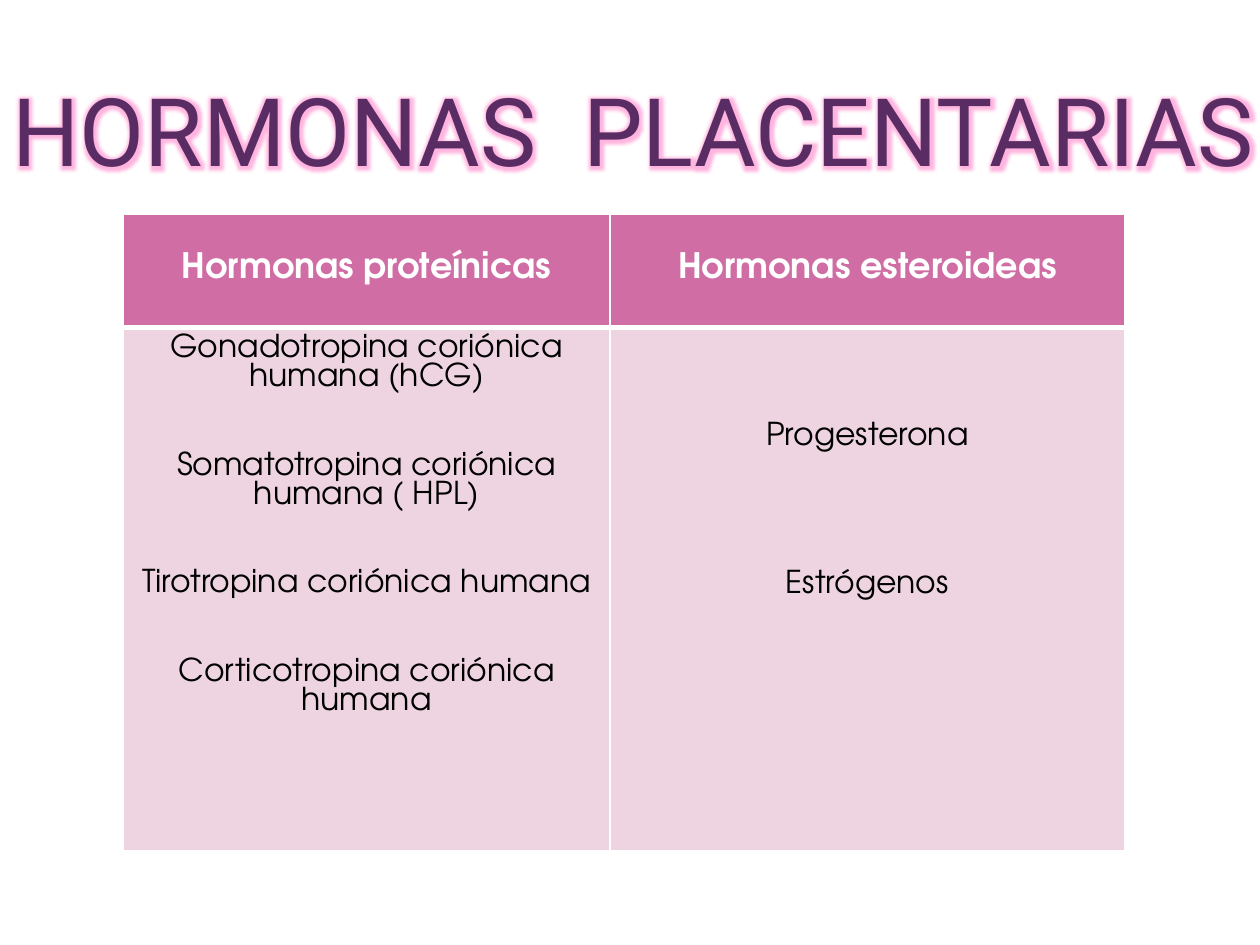
from dataclasses import dataclass

from lxml import etree
from pptx import Presentation
from pptx.dml.color import RGBColor
from pptx.enum.text import MSO_ANCHOR, MSO_AUTO_SIZE, PP_ALIGN
from pptx.oxml.ns import qn
from pptx.util import Inches, Pt

CENTER, LEFT = PP_ALIGN.CENTER, PP_ALIGN.LEFT
TOP = MSO_ANCHOR.TOP
FIT_SHAPE = MSO_AUTO_SIZE.SHAPE_TO_FIT_TEXT
TITLE_ONLY = 5


@dataclass(frozen=True)
class Theme:
    title_font: str = "Roboto"
    table_font: str = "TeX Gyre Adventor"
    title_size: float = 54
    head_size: float = 20
    body_size: float = 18
    body_line: float = 16.85  # height of one body line, points
    purple: str = "5A2C64"
    glow: str = "FFB4DF"
    head_fill: str = "CF6DA4"
    body_fill: str = "EDD4E0"
    white: str = "FFFFFF"
    black: str = "000000"


THEME = Theme()
COLUMNS = (3.86, 4.09)
ROWS = (0.9, 4.15)

# Per column: heading, blank lines above the list, blank lines between items, items
HORMONES = (
    ("Hormonas proteínicas", 0, 2, (
        "Gonadotropina coriónica humana (hCG)",
        "Somatotropina coriónica humana ( HPL)",
        "Tirotropina coriónica humana",
        "Corticotropina coriónica humana")),
    ("Hormonas esteroideas", 3, 4, ("Progesterona", "Estrógenos")),
)


def add_text(p, text, color, **formats):
    r = p.add_run()
    r.text = text
    for name, value in formats.items():
        setattr(r.font, name, value)
    r.font.color.rgb = RGBColor.from_string(color)
    return r


def add_glow(r, color, radius):
    """Put a soft glow behind a run, right after its fill."""
    effects = etree.Element(qn("a:effectLst"))
    glow = etree.SubElement(effects, qn("a:glow"), rad=str(Pt(radius)))
    etree.SubElement(glow, qn("a:srgbClr"), val=color)
    r.font._element.find(qn("a:solidFill")).addnext(effects)


def add_title(s, text):
    sp = s.shapes.title
    sp.left, sp.top, sp.width, sp.height = map(Inches, (0, 0.52, 12.05, 1.01))
    tf = sp.text_frame
    tf.word_wrap, tf.auto_size, tf.vertical_anchor = True, FIT_SHAPE, TOP
    p = tf.paragraphs[0]
    p.alignment = LEFT
    r = add_text(p, text, THEME.purple, name=THEME.title_font,
                 size=Pt(THEME.title_size))
    add_glow(r, THEME.glow, 8)


def style_cell(cell, fill, bottom=1):
    """Draw white borders, then fill the cell."""
    props = cell._tc.get_or_add_tcPr()
    for side, width in (("L", 1), ("R", 1), ("T", 1), ("B", bottom)):
        line = etree.SubElement(props, qn(f"a:ln{side}"), w=str(Pt(width)))
        paint = etree.SubElement(line, qn("a:solidFill"))
        etree.SubElement(paint, qn("a:srgbClr"), val=THEME.white)
    cell.fill.solid()
    cell.fill.fore_color.rgb = RGBColor.from_string(fill)


def fill_heading(cell, text):
    style_cell(cell, THEME.head_fill, bottom=3)
    p = cell.text_frame.paragraphs[0]
    p.alignment, p.line_spacing = CENTER, 2.0
    add_text(p, text, THEME.white, name=THEME.table_font,
             size=Pt(THEME.head_size), bold=True)


def fill_list(cell, lead, gap, items):
    style_cell(cell, THEME.body_fill)
    cell.margin_top = Inches(0.05) + Pt(lead * THEME.body_line)
    tf = cell.text_frame
    for i, item in enumerate(items):
        p = tf.add_paragraph() if i else tf.paragraphs[0]
        p.alignment = CENTER
        if i:
            p.space_before = Pt(gap * THEME.body_line)
        add_text(p, item, THEME.black, name=THEME.table_font,
                 size=Pt(THEME.body_size), bold=False)


def add_hormone_table(s):
    frame = s.shapes.add_table(
        len(ROWS), len(COLUMNS), Inches(0.98), Inches(1.7),
        Inches(sum(COLUMNS)), Inches(sum(ROWS)))
    table = frame.table
    for row, height in zip(table.rows, ROWS):
        row.height = Inches(height)
    for i, (heading, lead, gap, items) in enumerate(HORMONES):
        table.columns[i].width = Inches(COLUMNS[i])
        fill_heading(table.cell(0, i), heading)
        fill_list(table.cell(1, i), lead, gap, items)


def main():
    prs = Presentation()
    prs.slide_width, prs.slide_height = Inches(10), Inches(7.5)
    s = prs.slides.add_slide(prs.slide_layouts[TITLE_ONLY])
    add_title(s, "HORMONAS  PLACENTARIAS")
    add_hormone_table(s)
    prs.save("out.pptx")


if __name__ == "__main__":
    main()
